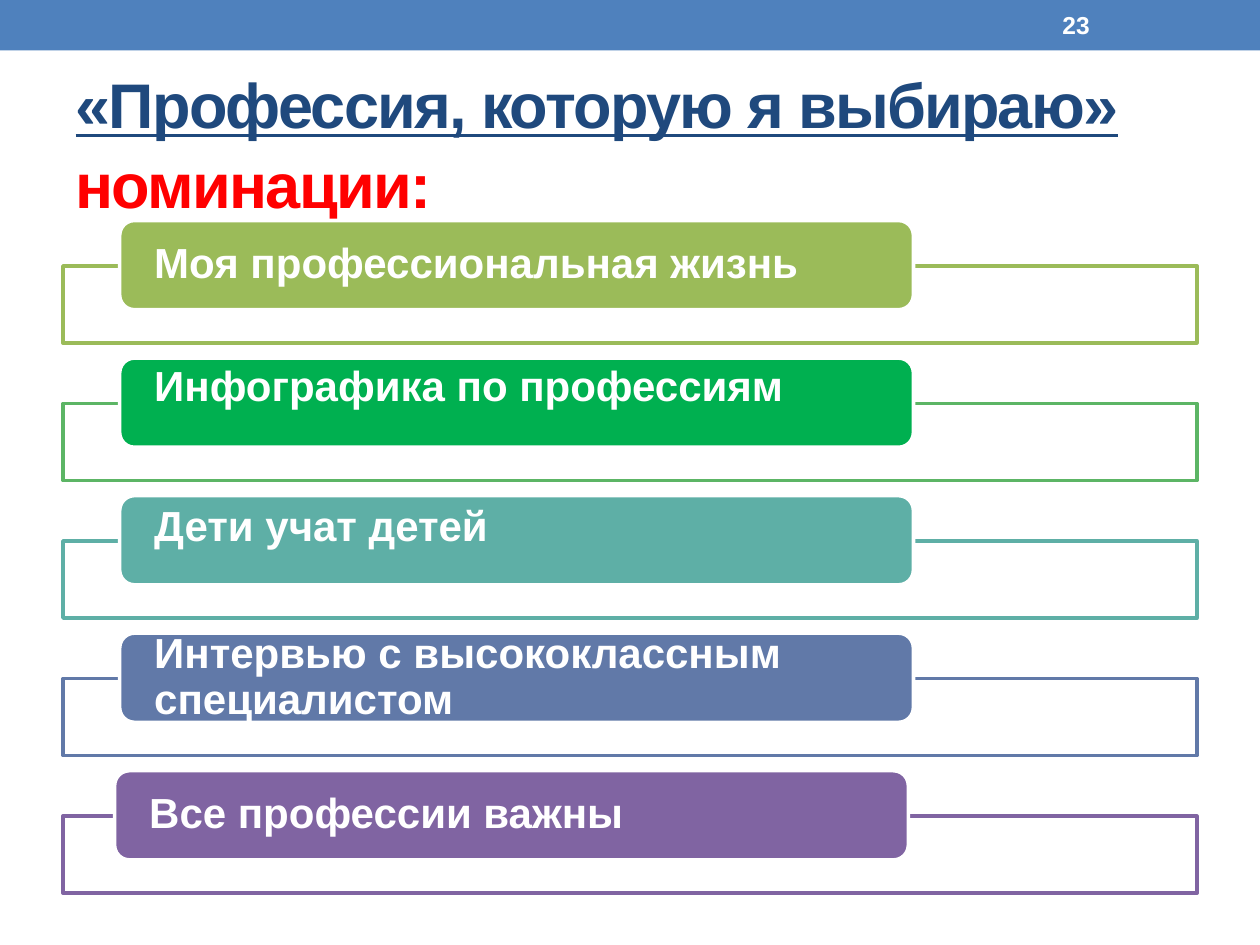
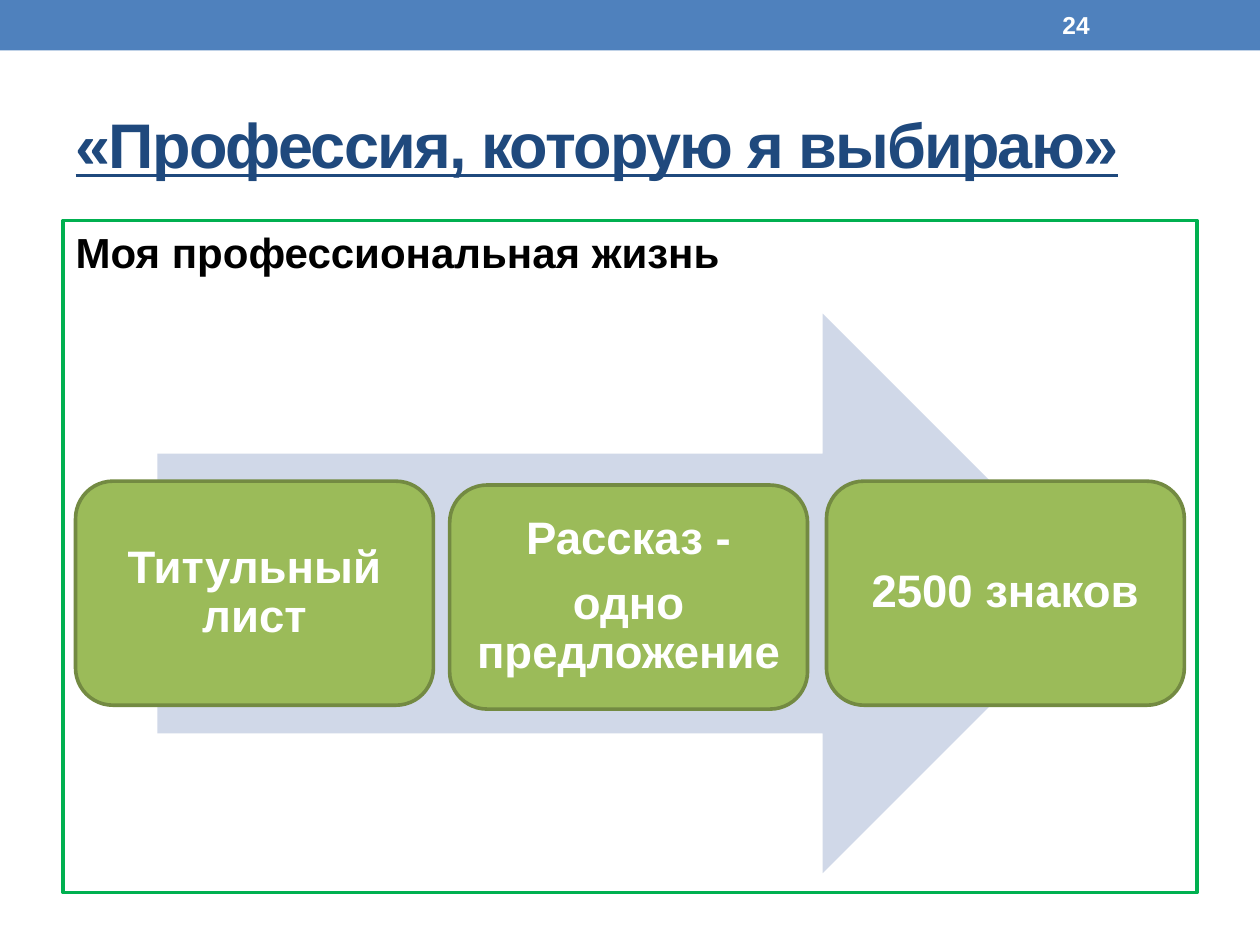
from pptx import Presentation
from pptx.dml.color import RGBColor
from pptx.enum.shapes import MSO_SHAPE
from pptx.enum.text import MSO_ANCHOR, MSO_AUTO_SIZE, PP_ALIGN
from pptx.util import Pt

FONT = "Arial"
WHITE = "FFFFFF"
BLACK = "000000"
BAND_BLUE = "4F81BD"
TITLE_NAVY = "1F497D"
ACCENT_RED = "FF0000"
OLIVE = "9BBB59"
DARK_OLIVE = "738A42"
GREEN = "00B050"
PALE_BLUE = "D0D8E8"
LINE_WIDTH = 2.08
CONTEST = "«Профессия, которую я выбираю»"

NOMINATIONS = [
    ("Моя профессиональная жизнь", OLIVE, OLIVE, 68.4, 0),
    ("Инфографика по профессиям", GREEN, "5CB565", 68.4, 17),
    ("Дети учат детей", "5EAFA6", "5EAFA6", 68.4, 14),
    ("Интервью с высококлассным специалистом", "6179A8", "6179A8", 68.4, 0),
    ("Все профессии важны", "8064A2", "8064A2", 65.5, 0),
]
STEPS = [
    ("Титульный лист", 43.2, 275),
    ("Рассказ -\nодно предложение", 257, 277.2),
    ("2500 знаков", 472.3, 275),
]


def color(value):
    return RGBColor.from_string(value)


def place(shape, left, top, width, height):
    shape.left, shape.top = Pt(left), Pt(top)
    shape.width, shape.height = Pt(width), Pt(height)


def format_run(run, size, font_color):
    run.font.name = FONT
    run.font.size = Pt(size)
    run.font.bold = True
    run.font.color.rgb = color(font_color)


def set_insets(frame, side, top, bottom):
    frame.margin_left = frame.margin_right = Pt(side)
    frame.margin_top, frame.margin_bottom = Pt(top), Pt(bottom)


def outline(shape, line_color):
    shape.line.color.rgb = color(line_color)
    shape.line.width = Pt(LINE_WIDTH)


def add_figure(slide, kind, bounds, fill, line_color=None):
    figure = slide.shapes.add_shape(kind, *(Pt(length) for length in bounds))
    figure.shadow.inherit = False
    figure.fill.solid()
    figure.fill.fore_color.rgb = color(fill)
    if line_color:
        outline(figure, line_color)
    else:
        figure.line.fill.background()
    return figure


def write_label(shape, text, size, align):
    frame = shape.text_frame
    frame.word_wrap = True
    frame.vertical_anchor = MSO_ANCHOR.MIDDLE
    frame.text = text
    for paragraph in frame.paragraphs:
        paragraph.alignment = align
        paragraph.line_spacing = 0.9
        paragraph.space_after = Pt(size * 0.35)
        for run in paragraph.runs:
            format_run(run, size, WHITE)


def add_master_band(deck, slide):
    band = add_figure(slide, MSO_SHAPE.RECTANGLE, (0, 0, 720, 28.8), BAND_BLUE)
    band.element.nvSpPr.cNvPr.set("id", "20")
    deck.slide_master.shapes.element.insert(2, band.element)


def set_title(slide, text):
    title = slide.shapes.title
    place(title, 36, 41.8, 648, 77.8)
    frame = title.text_frame
    frame.auto_size = MSO_AUTO_SIZE.NONE
    frame.vertical_anchor = MSO_ANCHOR.MIDDLE
    frame.text = text
    heading = frame.paragraphs[0]
    heading.alignment = PP_ALIGN.LEFT
    heading.line_spacing = 1.06
    for index, run in enumerate(heading.runs):
        format_run(run, 36, ACCENT_RED if index else TITLE_NAVY)
        run.font.underline = index == 0
        run.font._element.set("spc", "-100")


def add_page_number(slide, number):
    page = slide.shapes.add_textbox(Pt(600), Pt(1.4), Pt(84), Pt(26))
    frame = page.text_frame
    frame.word_wrap = True
    frame.vertical_anchor = MSO_ANCHOR.MIDDLE
    frame.text = str(number)
    format_run(frame.paragraphs[0].runs[0], 14, WHITE)


def add_slide(deck, layout_index, title, number):
    slide = deck.slides.add_slide(deck.slide_layouts[layout_index])
    set_title(slide, title)
    add_page_number(slide, number)
    return slide


def add_nomination(slide, top, text, fill, frame_color, left, lift):
    add_figure(slide, MSO_SHAPE.RECTANGLE, (36, top + 26, 648, 44), WHITE, frame_color)
    plate = add_figure(
        slide, MSO_SHAPE.ROUNDED_RECTANGLE, (left, top, 453.6, 51), fill, WHITE
    )
    set_insets(plate.text_frame, 17.3, 0, lift)
    write_label(plate, text, 24, PP_ALIGN.LEFT)


def add_step(slide, text, left, top):
    step = add_figure(
        slide, MSO_SHAPE.ROUNDED_RECTANGLE, (left, top, 204.5, 128), OLIVE, DARK_OLIVE
    )
    set_insets(step.text_frame, 8, 8, 8)
    write_label(step, text, 26, PP_ALIGN.CENTER)


def set_body(slide, text):
    body = slide.placeholders[1]
    place(body, 36, 126, 648, 384)
    outline(body, GREEN)
    frame = body.text_frame
    frame.auto_size = MSO_AUTO_SIZE.NONE
    frame.text = text
    topic = frame.paragraphs[0]
    topic.space_before = Pt(5)
    format_run(topic.runs[0], 24, BLACK)
    properties = topic._p.get_or_add_pPr()
    properties.set("marL", "0")
    properties.set("indent", "0")
    properties.append(properties.makeelement(
        "{http://schemas.openxmlformats.org/drawingml/2006/main}buNone", {}
    ))


def main():
    deck = Presentation()
    deck.slide_width, deck.slide_height = Pt(720), Pt(540)

    nominations = add_slide(deck, 5, CONTEST + "\vноминации:", 23)
    add_master_band(deck, nominations)
    for index, nomination in enumerate(NOMINATIONS):
        add_nomination(nominations, 126 + index * 78.6, *nomination)

    career = add_slide(deck, 1, CONTEST, 24)
    set_body(career, "Моя профессиональная жизнь")
    add_figure(career, MSO_SHAPE.RIGHT_ARROW, (90, 179.3, 540, 319.7), PALE_BLUE)
    for step in STEPS:
        add_step(career, *step)

    deck.save("out.pptx")


if __name__ == "__main__":
    main()
